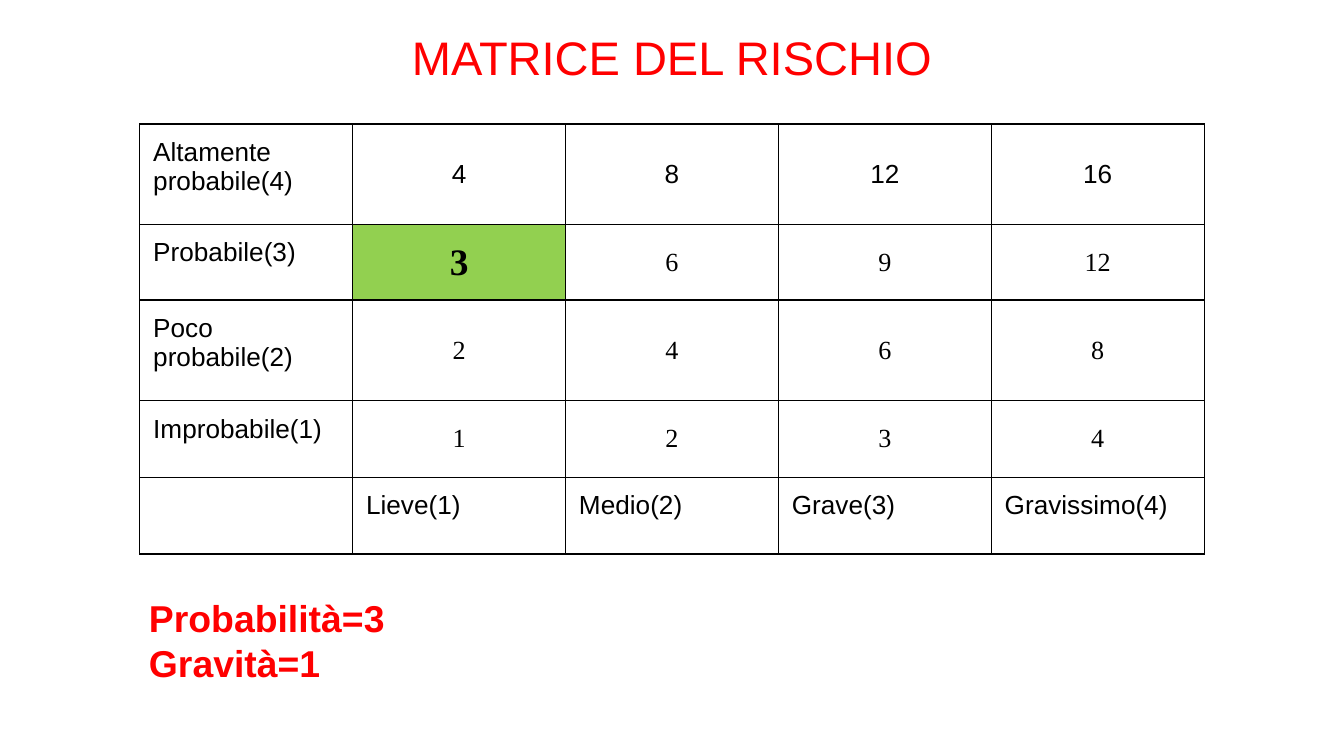
import pptx
import pptx.util
import pptx.dml.color
import pptx.enum.text
import pptx.oxml

WIDTH = 10
HEIGHT = WIDTH * 9 / 16
ALIGN = pptx.enum.text.PP_ALIGN
ANCHOR = pptx.enum.text.MSO_ANCHOR
SANS, SERIF = "Arial", "Times New Roman"
RED, BLACK, GREEN = "FF0000", "000000", "92D050"
LEVELS = ["Altamente probabile(4)", "Probabile(3)", "Poco probabile(2)", "Improbabile(1)"]
DAMAGES = ["Lieve(1)", "Medio(2)", "Grave(3)", "Gravissimo(4)"]
ROW_HEIGHTS = [0.75, 0.56, 0.75, 0.57, 0.57]
ROW_SHARES = [height / HEIGHT for height in ROW_HEIGHTS]
CURRENT_RISK = (3, 1)


def color(value):
    return pptx.dml.color.RGBColor.from_string(value)


def write(frame, text, font=SANS, size=14, fill=BLACK, bold=False, align=ALIGN.LEFT):
    frame.word_wrap = True
    frame.text = text
    for paragraph in frame.paragraphs:
        paragraph.alignment = align
        paragraph.font.name = font
        paragraph.font.size = pptx.util.Pt(size)
        paragraph.font.bold = bold
        paragraph.font.color.rgb = color(fill)


class RiskSlide:
    inset = pptx.util.Inches(0.1)
    border = pptx.util.Pt(0.75)

    def __init__(self, presentation):
        self.slide = presentation.slides.add_slide(presentation.slide_layouts[6])

    def place(self, left, top, width, height):
        shares = ((left, WIDTH), (top, HEIGHT), (width, WIDTH), (height, HEIGHT))
        return [pptx.util.Inches(share * length) for share, length in shares]

    def pad(self, target):
        target.margin_left = target.margin_right = self.inset
        target.margin_top = target.margin_bottom = self.inset

    def text(self, box, text, **style):
        frame = self.slide.shapes.add_textbox(*self.place(*box)).text_frame
        self.pad(frame)
        write(frame, text, **style)

    def outline(self, cell):
        properties = cell._tc.get_or_add_tcPr()
        for index, side in enumerate(("lnL", "lnR", "lnT", "lnB")):
            line = pptx.oxml.parse_xml(
                f'<a:{side} xmlns:a="http://schemas.openxmlformats.org/drawingml/2006/main" w="{self.border}">'
                f'<a:solidFill><a:srgbClr val="{BLACK}"/></a:solidFill></a:{side}>'
            )
            properties.insert(index, line)

    def cell(self, cell, text, fill=None, anchor=ANCHOR.TOP, **style):
        self.pad(cell)
        cell.vertical_anchor = anchor
        if fill:
            cell.fill.solid()
            cell.fill.fore_color.rgb = color(fill)
        else:
            cell.fill.background()
        write(cell.text_frame, text, **style)
        self.outline(cell)

    def matrix(self, left, top, width):
        rows, columns = len(LEVELS) + 1, len(DAMAGES) + 1
        box = self.place(left, top, width, sum(ROW_SHARES))
        table = self.slide.shapes.add_table(rows, columns, *box).table
        table.first_row = table.horz_banding = False
        for row, share in zip(table.rows, ROW_SHARES):
            row.height = pptx.util.Inches(share * HEIGHT)
        for row, label in enumerate(LEVELS):
            self.cell(table.cell(row, 0), label)
            probability = len(LEVELS) - row
            for damage in range(1, columns):
                style = {"font": SERIF if row else SANS}
                if (probability, damage) == CURRENT_RISK:
                    style.update(fill=GREEN, size=20, bold=True)
                self.cell(table.cell(row, damage), str(probability * damage),
                          anchor=ANCHOR.MIDDLE, align=ALIGN.CENTER, **style)
        for column, label in enumerate([""] + DAMAGES):
            self.cell(table.cell(rows - 1, column), label)


def main():
    presentation = pptx.Presentation()
    presentation.slide_width = pptx.util.Inches(WIDTH)
    presentation.slide_height = pptx.util.Inches(HEIGHT)
    page = RiskSlide(presentation)
    page.text((0.034, 0.02, 0.932, 0.11), "MATRICE DEL RISCHIO",
              size=25.2, fill=RED, align=ALIGN.CENTER)
    page.matrix(0.104, 0.164, 0.792)
    page.text((0.101, 0.77, 0.795, 0.18), "Probabilità=3\nGravità=1",
              size=20, fill=RED, bold=True)
    presentation.save("out.pptx")


if __name__ == "__main__":
    main()
